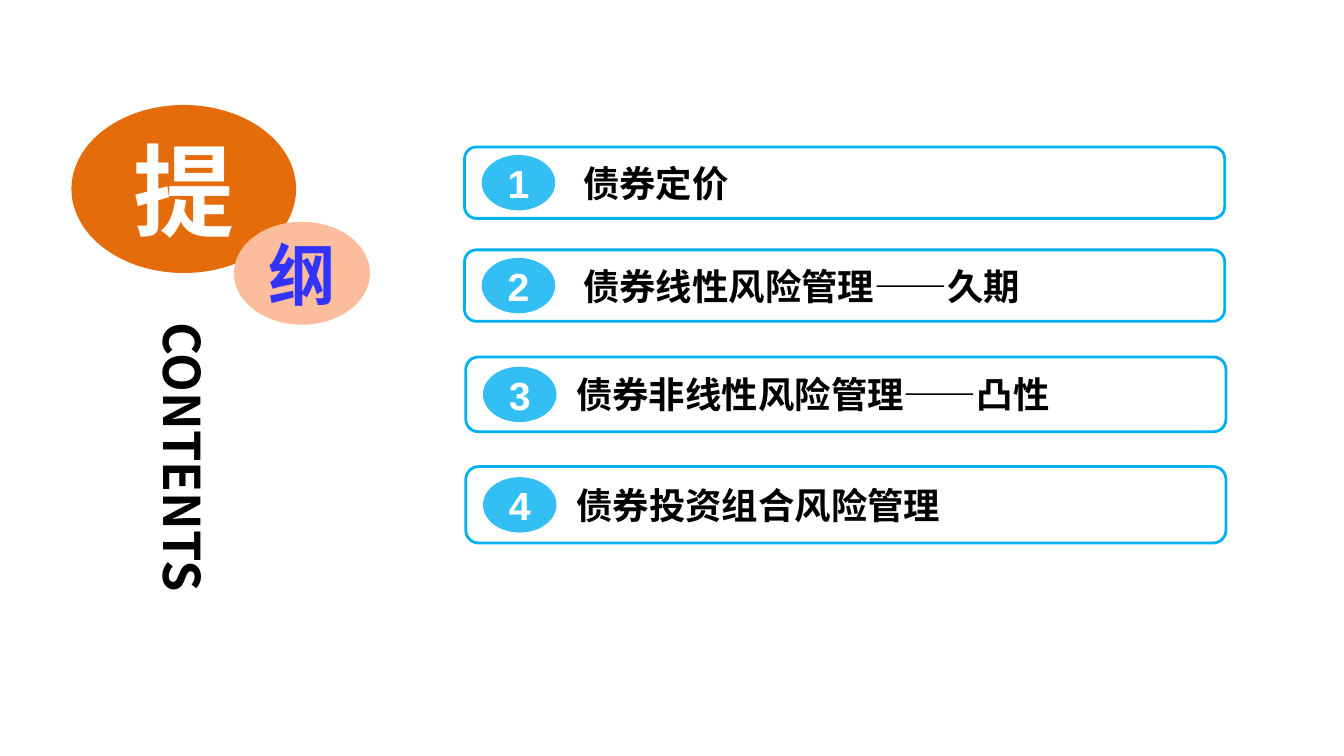
from lxml import etree
from pptx import Presentation
from pptx import util as u
from pptx.dml.color import RGBColor
from pptx.enum import shapes, text
from pptx.oxml.ns import qn

COLUMNS, ROWS = 32, 18
WHITE = RGBColor(0xFF, 0xFF, 0xFF)
BLACK = RGBColor(0x00, 0x00, 0x00)
SKY = RGBColor(0x00, 0xB0, 0xF0)
ORANGE = RGBColor(0xE4, 0x6C, 0x0A)
PEACH = RGBColor(0xFB, 0xBD, 0x9B)
INDIGO = RGBColor(0x33, 0x33, 0xFF)
HEADING_FONT = "Noto Sans CJK SC"
NUMBER_FONT = "Arial"

BAR_WIDTH = 18.1
BADGE_WIDTH, BADGE_HEIGHT, BADGE_OFFSET = 1.75, 1.32, 0.41

# wording, left column, top row, rows high, columns before the wording
TOPICS = [
    ("债券定价", 11.06, 3.5, 1.7, 2.74),
    ("债券线性风险管理——久期", 11.06, 5.95, 1.7, 2.74),
    ("债券非线性风险管理——凸性", 11.09, 8.5, 1.78, 2.54),
    ("债券投资组合风险管理", 11.09, 11.11, 1.82, 2.54),
]


class OutlineSlide:
    """Draws on one slide; all lengths are in grid columns and rows."""

    def __init__(self, presentation):
        self.column = presentation.slide_width / COLUMNS
        self.row = presentation.slide_height / ROWS
        self.slide = presentation.slides.add_slide(presentation.slide_layouts[6])

    def place(self, left, top, width, height):
        return (int(left * self.column), int(top * self.row),
                int(width * self.column), int(height * self.row))

    def label(self, shape, wording, size, color, font=HEADING_FONT,
              align=text.PP_ALIGN.CENTER, indent=0, wrap=True):
        frame = shape.text_frame
        frame.word_wrap = wrap
        frame.vertical_anchor = text.MSO_ANCHOR.MIDDLE
        frame.margin_left = int(indent * self.column)
        frame.margin_right = frame.margin_top = frame.margin_bottom = 0
        paragraph = frame.paragraphs[0]
        paragraph.alignment = align
        run = paragraph.add_run()
        run.text = wording
        paragraph.font.size = u.Pt(size)
        paragraph.font.bold = True
        paragraph.font.name = font
        paragraph.font.color.rgb = color
        # East Asian glyphs take their typeface from a separate element
        properties = run._r.get_or_add_rPr()
        etree.SubElement(properties, qn("a:ea"), typeface=font)

    def shape(self, kind, box, fill, line=None):
        shape = self.slide.shapes.add_shape(kind, *self.place(*box))
        shape.shadow.inherit = False
        shape.fill.solid()
        shape.fill.fore_color.rgb = fill
        if line is None:
            shape.line.fill.background()
        else:
            shape.line.color.rgb = line
            shape.line.width = u.Pt(2)
        return shape

    def oval(self, box, fill, wording, size, color, opacity=100, **style):
        oval = self.shape(shapes.MSO_SHAPE.OVAL, box, fill)
        if opacity < 100:
            tint = oval.fill._xPr.find(qn("a:solidFill"))[0]
            etree.SubElement(tint, qn("a:alpha"), val=str(opacity * 1000))
        self.label(oval, wording, size, color, **style)

    def topic(self, number, wording, left, top, height, indent):
        """Adds a bar with its wording and a vertically centred number."""
        bar = self.shape(shapes.MSO_SHAPE.ROUNDED_RECTANGLE,
                         (left, top, BAR_WIDTH, height), WHITE, SKY)
        self.label(bar, wording, 26, BLACK,
                   align=text.PP_ALIGN.LEFT, indent=indent)
        badge_top = top + (height - BADGE_HEIGHT) / 2
        self.oval((left + BADGE_OFFSET, badge_top, BADGE_WIDTH, BADGE_HEIGHT),
                  SKY, str(number), 28, WHITE, opacity=80,
                  font=NUMBER_FONT, wrap=False)

    def vertical_text(self, box, wording, size, color):
        caption = self.slide.shapes.add_textbox(*self.place(*box))
        self.label(caption, wording, size, color, align=text.PP_ALIGN.LEFT)
        caption.text_frame._txBody.bodyPr.set("vert", "eaVert")


def main():
    presentation = Presentation()
    presentation.slide_width = u.Inches(13.33)
    presentation.slide_height = u.Inches(7.5)
    outline = OutlineSlide(presentation)
    for number, topic in enumerate(TOPICS, start=1):
        outline.topic(number, *topic)
    outline.oval((1.7, 2.5, 5.35, 4), ORANGE, "提", 72, WHITE)
    outline.oval((5.57, 5.28, 3.24, 2.45), PEACH, "纲", 48, INDIGO)
    outline.vertical_text((3.31, 7.68, 2.14, 7.2), "CONTENTS", 36, BLACK)
    presentation.save("out.pptx")


if __name__ == "__main__":
    main()
